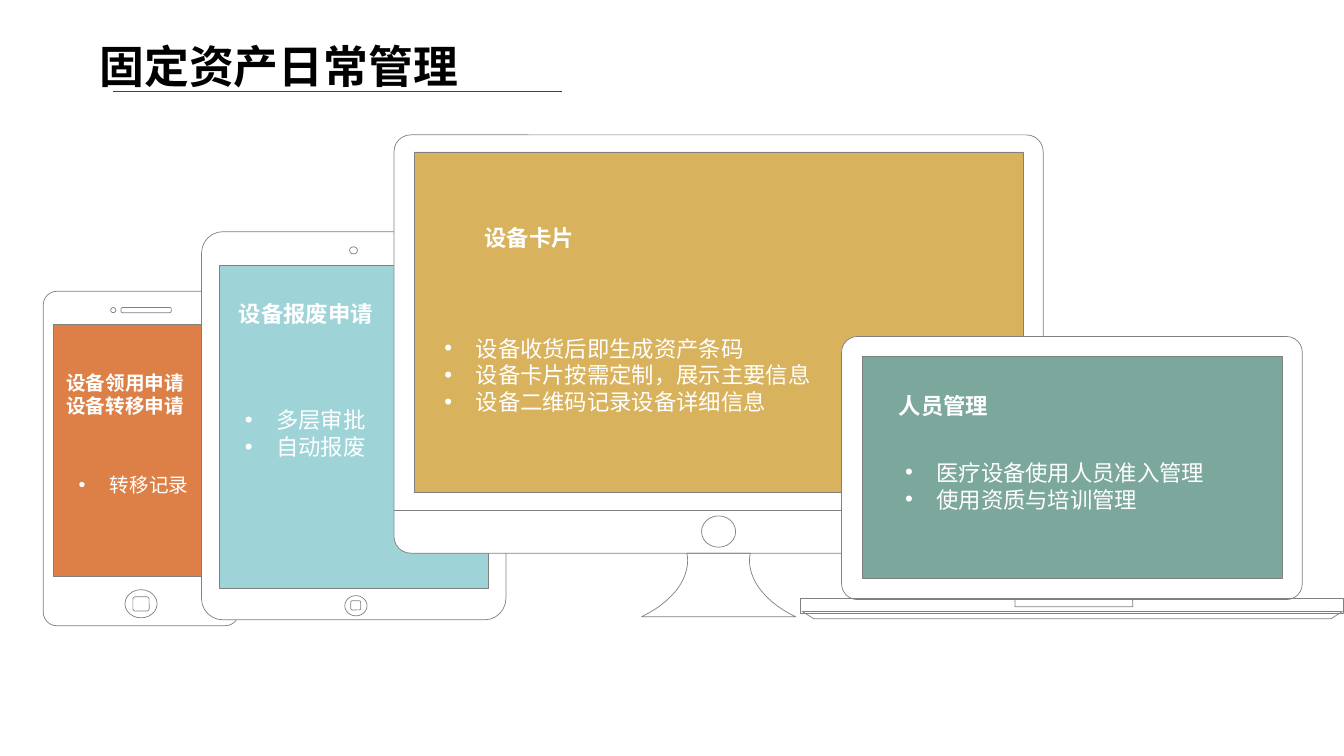
import pptx
import pptx.dml.color
import pptx.enum.shapes
import pptx.enum.text
import pptx.oxml.ns
import pptx.util
import lxml.etree

Cm = pptx.util.Cm
Pt = pptx.util.Pt
SHAPE = pptx.enum.shapes.MSO_SHAPE
FONT = "Noto Sans CJK SC"
COLORS = {
    "title": "000000",
    "rule": "404040",
    "outline": "808080",
    "white": "FFFFFF",
    "phone": "DD8047",
    "tablet": "9ED3D7",
    "monitor": "D8B25C",
    "laptop": "7BA79D",
}


def color(name):
    return pptx.dml.color.RGBColor.from_string(COLORS[name])


def add_element(parent, tag, **attributes):
    return lxml.etree.SubElement(parent, pptx.oxml.ns.qn(tag), attributes)


def style_shape(shape, fill=None):
    shape.shadow.inherit = False
    if fill:
        shape.fill.solid()
        shape.fill.fore_color.rgb = color(fill)
    else:
        shape.fill.background()
    shape.line.color.rgb = color("outline")
    shape.line.width = Pt(0.5)


def add_part(group, kind, box, offset, fill=None, adjustment=None):
    left, top = box[0] + offset[0], box[1] + offset[1]
    shape = group.shapes.add_shape(kind, Cm(left), Cm(top), Cm(offset[2]), Cm(offset[3]))
    style_shape(shape, fill)
    if adjustment is not None:
        shape.adjustments[0] = adjustment
    return shape


def add_line(shapes, left, right, top, line_color, width):
    line = shapes.add_connector(
        pptx.enum.shapes.MSO_CONNECTOR.STRAIGHT, Cm(left), Cm(top), Cm(right), Cm(top))
    line.line.color.rgb = color(line_color)
    line.line.width = Pt(width)
    add_element(line._element.spPr, "a:effectLst")


def add_text(slide, box, offset, lines, size=16, bold=False, bullets=False,
             wrap=False, text_color="white"):
    left, top = box[0] + offset[0], box[1] + offset[1]
    text_box = slide.shapes.add_textbox(Cm(left), Cm(top), Cm(offset[2]), Cm(offset[3]))
    frame = text_box.text_frame
    frame.word_wrap = wrap
    frame.auto_size = pptx.enum.text.MSO_AUTO_SIZE.SHAPE_TO_FIT_TEXT
    frame.margin_top = Pt(3.6 + size * 0.1)
    frame.margin_bottom = Pt(2)
    for index, line in enumerate(lines):
        paragraph = frame.add_paragraph() if index else frame.paragraphs[0]
        if bullets:
            properties = paragraph._p.get_or_add_pPr()
            properties.set("marL", str(Cm(0.79)))
            properties.set("indent", str(-Cm(0.79)))
            add_element(properties, "a:buFont", typeface="Arial")
            add_element(properties, "a:buChar", char="•")
        paragraph.line_spacing = Pt(size * 1.2)
        run = paragraph.add_run()
        run.text = line
        run.font.size = Pt(size)
        run.font.bold = bold
        run.font.color.rgb = color(text_color)
        run.font.name = FONT
        add_element(run._r.get_or_add_rPr(), "a:ea", typeface=FONT)


def add_header(slide, box):
    left, top, width, height = box
    add_line(slide.shapes, left + 0.58, left + 11.91, top + 1.57, "rule", 1)
    add_text(slide, box, (0, 0, width, height), ["固定资产日常管理"], 32,
             bold=True, wrap=True, text_color="title")


def add_phone(slide, box):
    group = slide.shapes.add_group_shape()
    add_part(group, SHAPE.ROUNDED_RECTANGLE, box, (0, 0, *box[2:]), adjustment=0.07)
    add_part(group, SHAPE.ROUNDED_RECTANGLE, box, (0.25, 0.84, 4.45, 6.35), "phone", 0)
    add_part(group, SHAPE.ROUNDED_RECTANGLE, box, (1.96, 0.41, 1.27, 0.13), adjustment=0.33)
    add_part(group, SHAPE.OVAL, box, (1.7, 0.41, 0.13, 0.13))
    add_part(group, SHAPE.OVAL, box, (2.06, 7.52, 0.81, 0.71))
    add_part(group, SHAPE.ROUNDED_RECTANGLE, box, (2.26, 7.7, 0.41, 0.36))
    add_text(slide, box, (0.33, 1.83, 3.51, 1.45), ["设备领用申请", "设备转移申请"], 14, bold=True)
    add_text(slide, box, (0.64, 4.39, 4.11, 0.86), ["转移记录"], 14, bullets=True, wrap=True)


def add_tablet(slide, box):
    group = slide.shapes.add_group_shape()
    add_part(group, SHAPE.ROUNDED_RECTANGLE, box, (0, 0, *box[2:]), "white", 0.07)
    add_part(group, SHAPE.RECTANGLE, box, (0.46, 0.84, 6.78, 8.15), "tablet")
    add_part(group, SHAPE.OVAL, box, (3.73, 0.38, 0.2, 0.18))
    add_part(group, SHAPE.OVAL, box, (3.61, 9.17, 0.56, 0.51))
    add_part(group, SHAPE.ROUNDED_RECTANGLE, box, (3.76, 9.3, 0.25, 0.23))
    add_text(slide, box, (0.69, 1.55, 3.94, 0.94), ["设备报废申请"], bold=True)
    add_text(slide, box, (0.84, 4.22, 4.11, 1.63), ["多层审批", "自动报废"],
             bullets=True, wrap=True)


def curve_points(start, first, second, end, steps=12):
    for step in range(steps + 1):
        t = step / steps
        weights = ((1 - t) ** 3, 3 * t * (1 - t) ** 2, 3 * t * t * (1 - t), t ** 3)
        yield tuple(sum(weight * point[axis] for weight, point in
                        zip(weights, (start, first, second, end))) for axis in (0, 1))


def add_stand(group, center, top):
    right = [(0.8, 0)]
    right += curve_points((0.78, 0.13), (0.77, 0.38), (0.85, 0.64), (1.03, 0.89))
    right += curve_points((1.03, 0.89), (1.26, 1.19), (1.56, 1.42), (1.94, 1.6))
    outline = right + [(-x, y) for x, y in reversed(right)]
    points = [(Cm(center + x), Cm(top + y)) for x, y in outline]
    builder = group.shapes.build_freeform(*points[0], scale=1.0)
    builder.add_line_segments(points[1:], close=True)
    style_shape(builder.convert_to_shape())


def add_monitor(slide, box):
    left, top, width, height = box
    group = slide.shapes.add_group_shape()
    add_part(group, SHAPE.ROUNDED_RECTANGLE, box, (0, 0, width, height), "white", 0.04)
    add_part(group, SHAPE.RECTANGLE, box, (0.51, 0.43, 15.34, 8.59), "monitor")
    add_line(group.shapes, left, left + width, top + 9.47, "outline", 0.75)
    add_part(group, SHAPE.OVAL, box, (7.75, 9.6, 0.86, 0.79))
    add_stand(group, left + width / 2, top + height)
    add_text(slide, box, (2.03, 2.06, 2.79, 0.94), ["设备卡片"], bold=True)
    add_text(slide, box, (1.02, 4.85, 9.86, 2.31),
             ["设备收货后即生成资产条码", "设备卡片按需定制，展示主要信息", "设备二维码记录设备详细信息"],
             bullets=True)


def add_laptop(slide, box):
    group = slide.shapes.add_group_shape()
    add_part(group, SHAPE.ROUNDED_RECTANGLE, box, (0, 0, *box[2:]), "white", 0.06)
    add_part(group, SHAPE.RECTANGLE, box, (0.53, 0.51, 10.59, 5.59), "laptop")
    add_part(group, SHAPE.RECTANGLE, box, (-1.04, 6.6, 13.69, 0.38))
    foot = add_part(group, SHAPE.TRAPEZOID, box, (-0.99, 6.93, 13.61, 0.18), adjustment=1.58)
    foot.rotation = 180
    add_part(group, SHAPE.ROUND_1_RECTANGLE, box, (4.37, 6.63, 2.97, 0.18))
    add_text(slide, box, (1.19, 1.22, 2.79, 0.94), ["人员管理"], bold=True)
    add_text(slide, box, (1.35, 2.9, 8.15, 1.63),
             ["医疗设备使用人员准入管理", "使用资质与培训管理"], bullets=True)


def main():
    presentation = pptx.Presentation()
    presentation.slide_width = Cm(33.87)
    presentation.slide_height = Cm(19.05)
    slide = presentation.slides.add_slide(presentation.slide_layouts[6])
    add_header(slide, (2.26, 0.74, 34.24, 1.63))
    add_phone(slide, (1.09, 7.34, 4.93, 8.43))
    add_tablet(slide, (5.08, 5.84, 7.67, 9.78))
    add_monitor(slide, (9.93, 3.4, 16.36, 10.54))
    add_laptop(slide, (21.21, 8.48, 11.61, 6.63))
    presentation.save("out.pptx")


if __name__ == "__main__":
    main()
